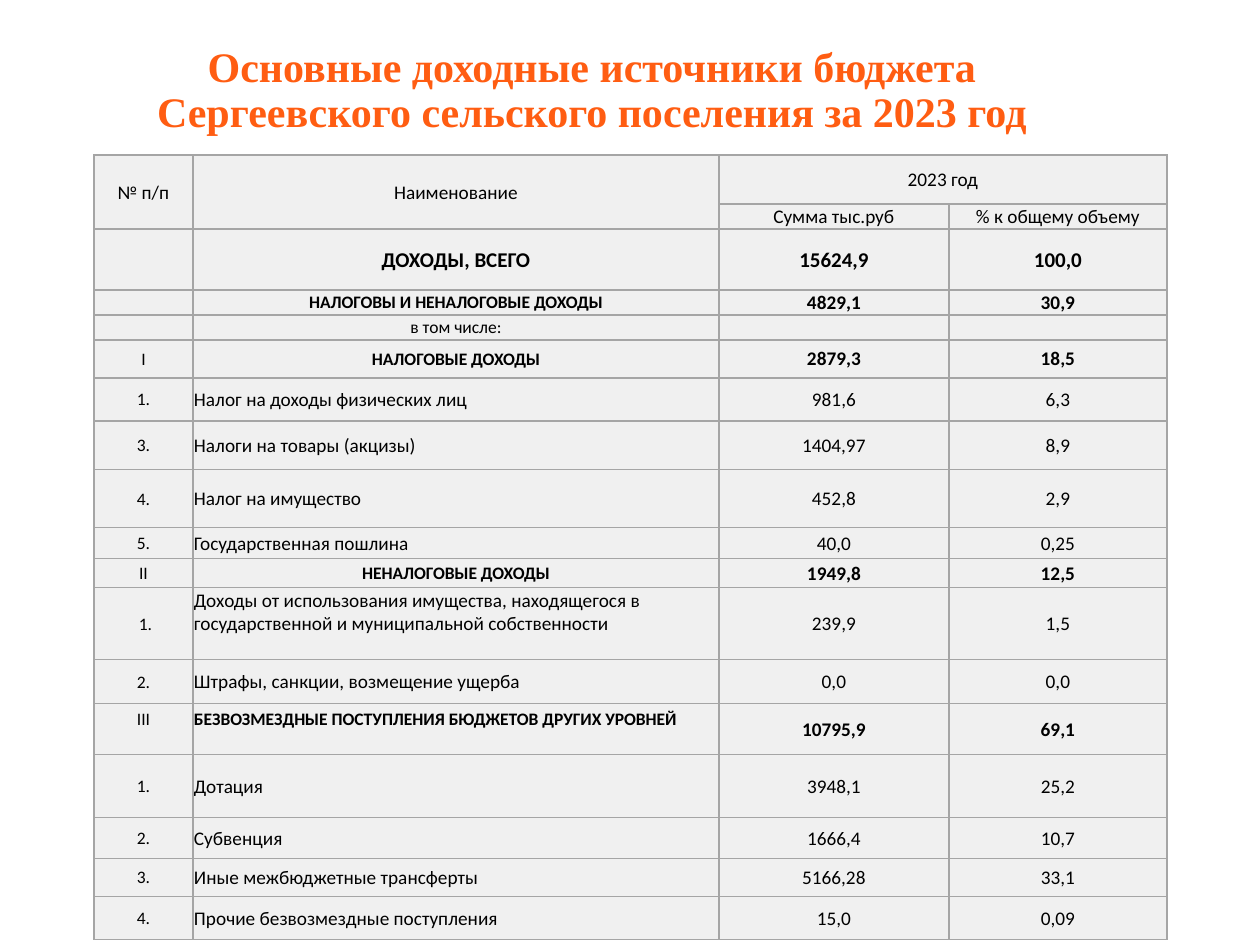
from dataclasses import dataclass

from lxml import etree
from pptx import Presentation, util as u
from pptx.dml import color
from pptx.enum import text
from pptx.oxml import ns
from pptx.slide import Slide

PX = 914400 // 126
COLORS = {"title": "FF5D12", "text": "000000", "cell": "F0F0F0", "border": "A5A5A5"}
COLUMN_WIDTHS = (99, 526, 230, 218)
HEADER_HEIGHTS = (49, 25)


@dataclass
class Style:
    size: int = 11
    bold: bool = False
    align: text.PP_ALIGN = text.PP_ALIGN.CENTER
    anchor: text.MSO_ANCHOR = text.MSO_ANCHOR.MIDDLE
    top: int = 1


@dataclass
class IncomeRow:
    height: int
    number: str
    name: str
    amount: str
    share: str
    name_style: Style
    number_style: Style
    value_style: Style


HEADER = Style()
SMALL = Style(10)
SECTION = Style(10, True)
TOTAL = Style(12, True)
ITEM = Style(align=text.PP_ALIGN.LEFT)
TOP_ITEM = Style(align=text.PP_ALIGN.LEFT, anchor=text.MSO_ANCHOR.TOP)
TOP_SECTION = Style(10, True, text.PP_ALIGN.LEFT, text.MSO_ANCHOR.TOP, 5)
TOP_NUMBER = Style(10, anchor=text.MSO_ANCHOR.TOP, top=5)


def income(height: int, number: str, name: str, amount: str, share: str,
           name_style: Style = ITEM, number_style: Style = SMALL) -> IncomeRow:
    value_style = Style(max(name_style.size, 11), name_style.bold) if amount else SMALL
    return IncomeRow(height, number, name, amount, share,
                     name_style, number_style, value_style)


INCOMES = (
    income(61, "", "ДОХОДЫ, ВСЕГО", "15624,9", "100,0", TOTAL),
    income(25, "", "НАЛОГОВЫ И НЕНАЛОГОВЫЕ ДОХОДЫ", "4829,1", "30,9", SECTION),
    income(25, "", "в том числе:", "", "", SMALL),
    income(38, "I", "НАЛОГОВЫЕ ДОХОДЫ", "2879,3", "18,5", SECTION),
    income(43, "1.", "Налог на доходы физических лиц", "981,6", "6,3"),
    income(49, "3.", "Налоги на товары (акцизы)", "1404,97", "8,9"),
    income(58, "4.", "Налог на имущество", "452,8", "2,9"),
    income(31, "5.", "Государственная пошлина", "40,0", "0,25"),
    income(29, "II", "НЕНАЛОГОВЫЕ ДОХОДЫ", "1949,8", "12,5", SECTION),
    income(72, " 1.", "Доходы от использования имущества, находящегося в "
           "государственной и муниципальной собственности", "239,9", "1,5", TOP_ITEM),
    income(44, "2.", "Штрафы, санкции, возмещение ущерба", "0,0", "0,0"),
    income(51, "III", "БЕЗВОЗМЕЗДНЫЕ ПОСТУПЛЕНИЯ БЮДЖЕТОВ ДРУГИХ УРОВНЕЙ",
           "10795,9", "69,1", TOP_SECTION, TOP_NUMBER),
    income(63, "1.", "Дотация", "3948,1", "25,2"),
    income(41, "2.", "Субвенция", "1666,4", "10,7"),
    income(38, "3.", "Иные межбюджетные трансферты", "5166,28", "33,1"),
    income(43, "4.", "Прочие безвозмездные поступления", "15,0", "0,09"),
)


def rgb(name: str) -> color.RGBColor:
    return color.RGBColor.from_string(COLORS[name])


def add_run(paragraph, wording: str, font_name: str, size: int, bold: bool, ink: str) -> None:
    run = paragraph.add_run()
    run.text = wording
    run.font.name = font_name
    run.font.size = u.Pt(size)
    run.font.bold = bold
    run.font.color.rgb = rgb(ink)


def draw_title(slide: Slide) -> None:
    title = slide.shapes.title
    title.left, title.top, title.width, title.height = (v * PX for v in (115, 37, 1032, 814))
    frame = title.text_frame
    frame.word_wrap = True
    frame.auto_size = text.MSO_AUTO_SIZE.NONE
    frame.vertical_anchor = text.MSO_ANCHOR.TOP
    frame.margin_left, frame.margin_right = 0, 78 * PX
    frame.margin_top = 9 * PX
    heading = frame.paragraphs[0]
    heading.alignment = text.PP_ALIGN.CENTER
    heading.line_spacing = 0.9
    properties = heading._p.get_or_add_pPr()
    properties.set("marL", "0")
    properties.set("indent", str(-72 * PX))
    add_run(heading, "Основные доходные источники бюджета", "Times New Roman", 24, True, "title")
    heading.add_line_break()
    add_run(heading, "Сергеевского сельского поселения за 2023 год",
            "Times New Roman", 24, True, "title")


def draw_borders(cell) -> None:
    properties = cell._tc.get_or_add_tcPr()
    for index, side in enumerate(("lnL", "lnR", "lnT", "lnB")):
        line = etree.Element(ns.qn(f"a:{side}"), w=str(u.Pt(1)))
        fill = etree.SubElement(line, ns.qn("a:solidFill"))
        etree.SubElement(fill, ns.qn("a:srgbClr"), val=COLORS["border"])
        properties.insert(index, line)


def format_cell(cell) -> None:
    cell.fill.solid()
    cell.fill.fore_color.rgb = rgb("cell")
    cell.margin_left = cell.margin_right = cell.margin_top = PX
    cell.margin_bottom = 0
    draw_borders(cell)


def write_cell(cell, wording: str, style: Style) -> None:
    cell.vertical_anchor = style.anchor
    cell.margin_top = style.top * PX
    paragraph = cell.text_frame.paragraphs[0]
    paragraph.alignment = style.align
    if wording:
        add_run(paragraph, wording, "Calibri", style.size, style.bold, "text")
    else:
        etree.SubElement(paragraph._p, ns.qn("a:endParaRPr"), sz=str(style.size * 100))


def draw_incomes(slide: Slide) -> None:
    heights = HEADER_HEIGHTS + tuple(row.height for row in INCOMES)
    frame = slide.shapes.add_table(len(heights), len(COLUMN_WIDTHS), 94 * PX, 155 * PX,
                                   sum(COLUMN_WIDTHS) * PX, sum(heights) * PX)
    table = frame.table
    table.first_row = table.horz_banding = False
    for column, width in zip(table.columns, COLUMN_WIDTHS):
        column.width = width * PX
    for row, height in zip(table.rows, heights):
        row.height = height * PX
    for cell in table.iter_cells():
        format_cell(cell)
    for start, end in (((0, 0), (1, 0)), ((0, 1), (1, 1)), ((0, 2), (0, 3))):
        table.cell(*start).merge(table.cell(*end))
    headers = {(0, 0): "№ п/п", (0, 1): "Наименование", (0, 2): "2023 год",
               (1, 2): "Сумма тыс.руб", (1, 3): "% к общему объему"}
    for place, wording in headers.items():
        write_cell(table.cell(*place), wording, HEADER)
    for index, row in enumerate(INCOMES, len(HEADER_HEIGHTS)):
        parts = ((row.number, row.number_style), (row.name, row.name_style),
                 (row.amount, row.value_style), (row.share, row.value_style))
        for column, (wording, style) in enumerate(parts):
            write_cell(table.cell(index, column), wording, style)


def main() -> None:
    deck = Presentation()
    deck.slide_width, deck.slide_height = u.Inches(10), u.Inches(7.5)
    slide = deck.slides.add_slide(deck.slide_layouts[5])
    draw_title(slide)
    draw_incomes(slide)
    deck.save("out.pptx")


if __name__ == "__main__":
    main()
